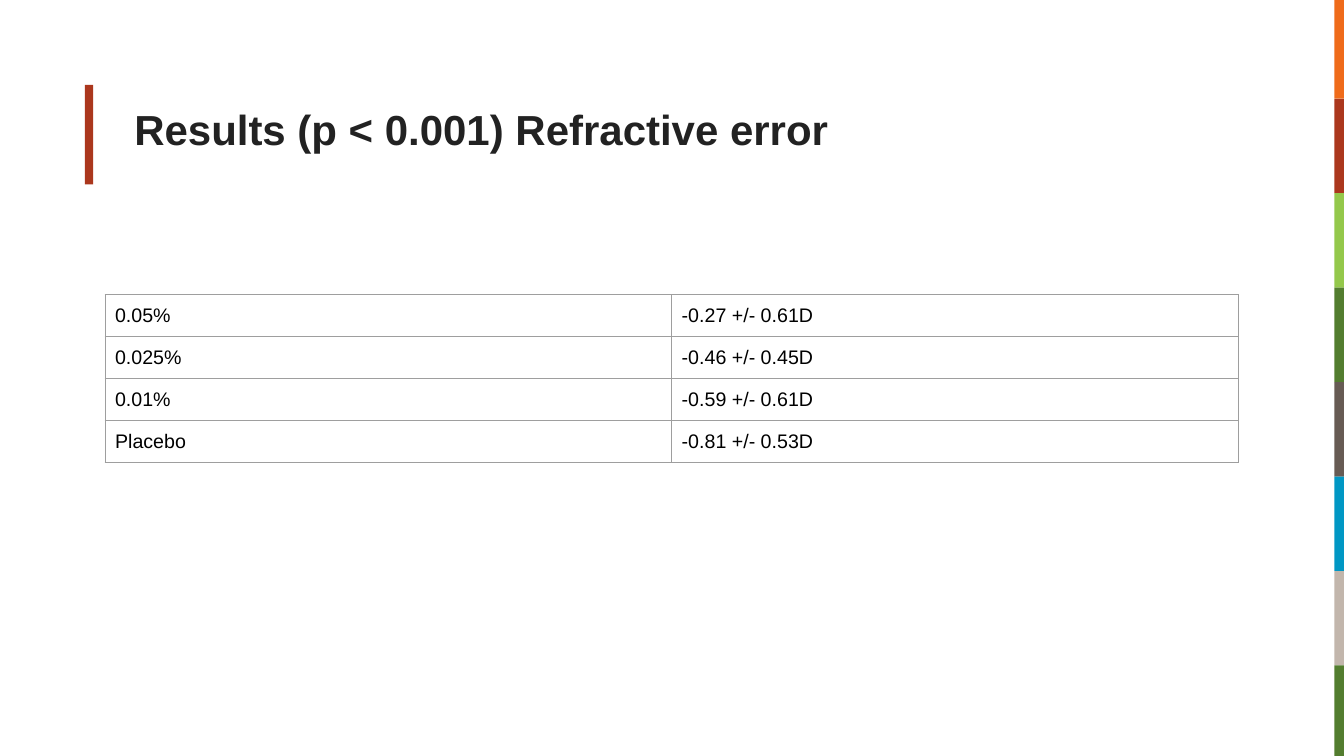
"""Builds a results slide with a title, a table and a colour strip."""
from lxml.etree import SubElement as Sub
from pptx import Presentation
from pptx.dml.color import RGBColor
from pptx.enum.shapes import MSO_SHAPE as Kind
from pptx.enum.text import MSO_ANCHOR as Anchor, PP_ALIGN as Align
from pptx.oxml.ns import qn
from pptx.util import Cm, Pt

RUST = RGBColor(0xAB, 0x37, 0x1D)
ORANGE = RGBColor(0xEF, 0x6B, 0x1A)
LIME = RGBColor(0x94, 0xC8, 0x4B)
GREEN = RGBColor(0x53, 0x7D, 0x2F)
BROWN = RGBColor(0x67, 0x5B, 0x54)
BLUE = RGBColor(0x00, 0x97, 0xC4)
SAND = RGBColor(0xC2, 0xB6, 0xAC)
INK = RGBColor(0x22, 0x22, 0x22)
BLACK = RGBColor(0x00, 0x00, 0x00)
GREY = RGBColor(0x9E, 0x9E, 0x9E)

WIDE, HIGH = 33.87, 19.05
HEAD = {"name": "Arial", "size": Pt(30), "bold": True}
BODY = {"name": "Arial", "size": Pt(14), "bold": False}

deck = Presentation()
deck.slide_width, deck.slide_height = Cm(WIDE), Cm(HIGH)
slide = deck.slides.add_slide(deck.slide_layouts[5])


def add_bar(left, top, width, height, color):
    bar = slide.shapes.add_shape(
        Kind.RECTANGLE, Cm(left), Cm(top), Cm(width), Cm(height))
    bar.shadow.inherit = False
    bar.fill.solid()
    bar.fill.fore_color.rgb = color
    bar.line.fill.background()


def set_font(para, form, color):
    for key, value in form.items():
        setattr(para.font, key, value)
    para.font.color.rgb = color


add_bar(2.14, 2.14, 0.21, 2.51, RUST)

edge, top, step = 33.63, 0, 2.49
for color in (ORANGE, RUST, LIME, GREEN, BROWN, BLUE, SAND, GREEN):
    add_bar(edge, top, WIDE - edge, min(step, HIGH - top), color)
    top, step = top + step, 2.38

title = slide.shapes.title
title.left, title.top = Cm(3.13), Cm(1.57)
title.width, title.height = Cm(27.94), Cm(3.18)
frame = title.text_frame
frame.text = "Results (p < 0.001) Refractive error"
frame.word_wrap = True
frame.vertical_anchor = Anchor.MIDDLE
para = frame.paragraphs[0]
para.alignment = Align.LEFT
para.line_spacing = 1.15
set_font(para, HEAD, INK)

rows = [
    ("0.05%", "-0.27 +/- 0.61D"),
    ("0.025%", "-0.46 +/- 0.45D"),
    ("0.01%", "-0.59 +/- 0.61D"),
    ("Placebo", "-0.81 +/- 0.53D"),
]
table = slide.shapes.add_table(
    len(rows), 2, Cm(2.65), Cm(7.42), Cm(28.56), Cm(4.24)).table
table.first_row = table.horz_banding = False
for row, texts in zip(table.rows, rows):
    for cell, text in zip(row.cells, texts):
        cell.text = text
        set_font(cell.text_frame.paragraphs[0], BODY, BLACK)
        for side in ("left", "right", "top", "bottom"):
            setattr(cell, f"margin_{side}", Cm(0.25))
        props = cell._tc.get_or_add_tcPr()
        for side in "LRTB":
            line = Sub(props, qn(f"a:ln{side}"), w=str(Pt(0.75)))
            fill = Sub(line, qn("a:solidFill"))
            Sub(fill, qn("a:srgbClr"), val=str(GREY))
        cell.fill.background()

deck.save("out.pptx")
